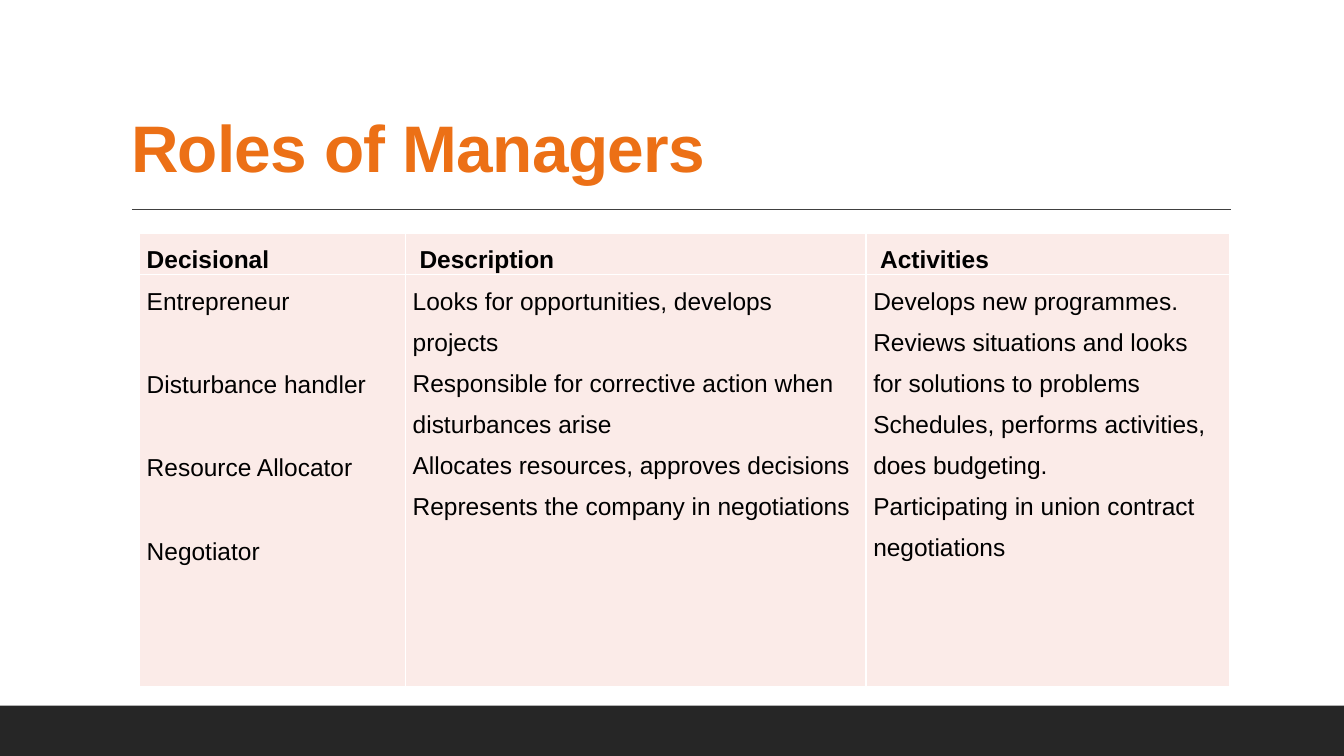
from lxml import etree
from pptx import Presentation
from pptx.dml.color import RGBColor
from pptx.enum.shapes import MSO_CONNECTOR, MSO_SHAPE
from pptx.enum.text import MSO_ANCHOR, MSO_AUTO_SIZE, PP_ALIGN
from pptx.oxml.ns import qn
from pptx.util import Pt

RECT = MSO_SHAPE.RECTANGLE
STRAIGHT = MSO_CONNECTOR.STRAIGHT
BOTTOM = MSO_ANCHOR.BOTTOM
NO_FIT = MSO_AUTO_SIZE.NONE
LEFT, JUSTIFY = PP_ALIGN.LEFT, PP_ALIGN.JUSTIFY

TITLE = "Roles of Managers"
HEADERS = ["Decisional", "Description", "Activities"]
ROLES = ["Entrepreneur", "Disturbance handler", "Resource Allocator", "Negotiator"]
DESCRIPTIONS = [
    "Looks for opportunities, develops projects",
    "Responsible for corrective action when disturbances arise",
    "Allocates resources, approves decisions",
    "Represents the company in negotiations",
]
ACTIVITIES = [
    "Develops new programmes.",
    "Reviews situations and looks for solutions to problems",
    "Schedules, performs activities, does budgeting.",
    "Participating in union contract negotiations",
]
COLUMNS = [ROLES, DESCRIPTIONS, ACTIVITIES]

COLORS = {
    "bar": "262626", "rule": "404040", "title": "EC7016",
    "cell": "FBEBE8", "border": "FFFFFF", "text": "000000",
}
FONT = "Arial"
WIDTH, HEIGHT = 960, 540
BAR_HEIGHT = 36
RULE_LEFT, RULE_RIGHT, RULE_Y = 94.3, 879.1, 149.5
TABLE_LEFT, TABLE_TOP = 99.6, 166.5
COLUMN_WIDTHS = [190, 329, 260]
ROW_HEIGHTS = [26, 294.5]
TEXT_SIZE = 17.5
ROLE_GAP = 30.2  # one text line, so each role sits beside its description
CELL_INSET, HEADER_INDENT = 5.2, 4.9


def rgb(name):
    return RGBColor.from_string(COLORS[name])


def add_run(p, text, size, color, bold=False):
    r = p.add_run()
    r.text = text
    r.font.name = FONT
    r.font.size = Pt(size)
    r.font.bold = bold
    r.font.color.rgb = rgb(color)
    return r


def set_borders(cell):
    tc_pr = cell._tc.get_or_add_tcPr()
    for i, side in enumerate(("lnL", "lnR", "lnT", "lnB")):
        ln = etree.Element(qn("a:" + side), w=str(Pt(1)))
        fill = etree.SubElement(ln, qn("a:solidFill"))
        etree.SubElement(fill, qn("a:srgbClr"), val=COLORS["border"])
        tc_pr.insert(i, ln)


def fill_cell(cell, lines, bold=False, align=LEFT, indent=0, gap=0):
    cell.margin_left = Pt(CELL_INSET + indent)
    cell.margin_right = Pt(CELL_INSET)
    cell.margin_top = cell.margin_bottom = 0
    cell.fill.solid()
    cell.fill.fore_color.rgb = rgb("cell")
    set_borders(cell)
    tf = cell.text_frame
    for i, line in enumerate(lines):
        p = tf.add_paragraph() if i else tf.paragraphs[0]
        p.alignment = align
        p.line_spacing = 1.5
        p.space_before = Pt(0)
        p.space_after = Pt(gap if i < len(lines) - 1 else 0)
        add_run(p, line, TEXT_SIZE, "text", bold)


def add_title(s):
    title = s.shapes.title
    title.left, title.top, title.width, title.height = Pt(86.4), Pt(22.3), Pt(792), Pt(114.5)
    tf = title.text_frame
    tf.word_wrap = True
    tf.auto_size = NO_FIT
    tf.vertical_anchor = BOTTOM
    p = tf.paragraphs[0]
    p.alignment = LEFT
    p.line_spacing = 0.9
    r = add_run(p, TITLE, 47, "title", bold=True)
    r.font._element.set("spc", "-50")


def add_bar_and_rule(s):
    bar = s.shapes.add_shape(RECT, 0, Pt(HEIGHT - BAR_HEIGHT), Pt(WIDTH), Pt(BAR_HEIGHT))
    bar.shadow.inherit = False
    bar.fill.solid()
    bar.fill.fore_color.rgb = rgb("bar")
    bar.line.fill.background()
    rule = s.shapes.add_connector(STRAIGHT, Pt(RULE_LEFT), Pt(RULE_Y), Pt(RULE_RIGHT), Pt(RULE_Y))
    rule.line.color.rgb = rgb("rule")
    rule.line.width = Pt(1)
    etree.SubElement(rule._element.spPr, qn("a:effectLst"))


def add_roles_table(s):
    table = s.shapes.add_table(
        len(ROW_HEIGHTS), len(COLUMN_WIDTHS), Pt(TABLE_LEFT), Pt(TABLE_TOP),
        Pt(sum(COLUMN_WIDTHS)), Pt(sum(ROW_HEIGHTS))).table
    table.first_row = table.horz_banding = False
    for row, height in zip(table.rows, ROW_HEIGHTS):
        row.height = Pt(height)
    for i, (width, header, lines) in enumerate(zip(COLUMN_WIDTHS, HEADERS, COLUMNS)):
        table.columns[i].width = Pt(width)
        fill_cell(table.cell(0, i), [header], bold=True, align=JUSTIFY,
                  indent=HEADER_INDENT if i else 0)
        fill_cell(table.cell(1, i), lines, gap=ROLE_GAP if lines is ROLES else 0)


def main():
    prs = Presentation()
    prs.slide_width, prs.slide_height = Pt(WIDTH), Pt(HEIGHT)
    s = prs.slides.add_slide(prs.slide_layouts[5])
    add_bar_and_rule(s)
    add_title(s)
    add_roles_table(s)
    prs.save("out.pptx")


if __name__ == "__main__":
    main()
